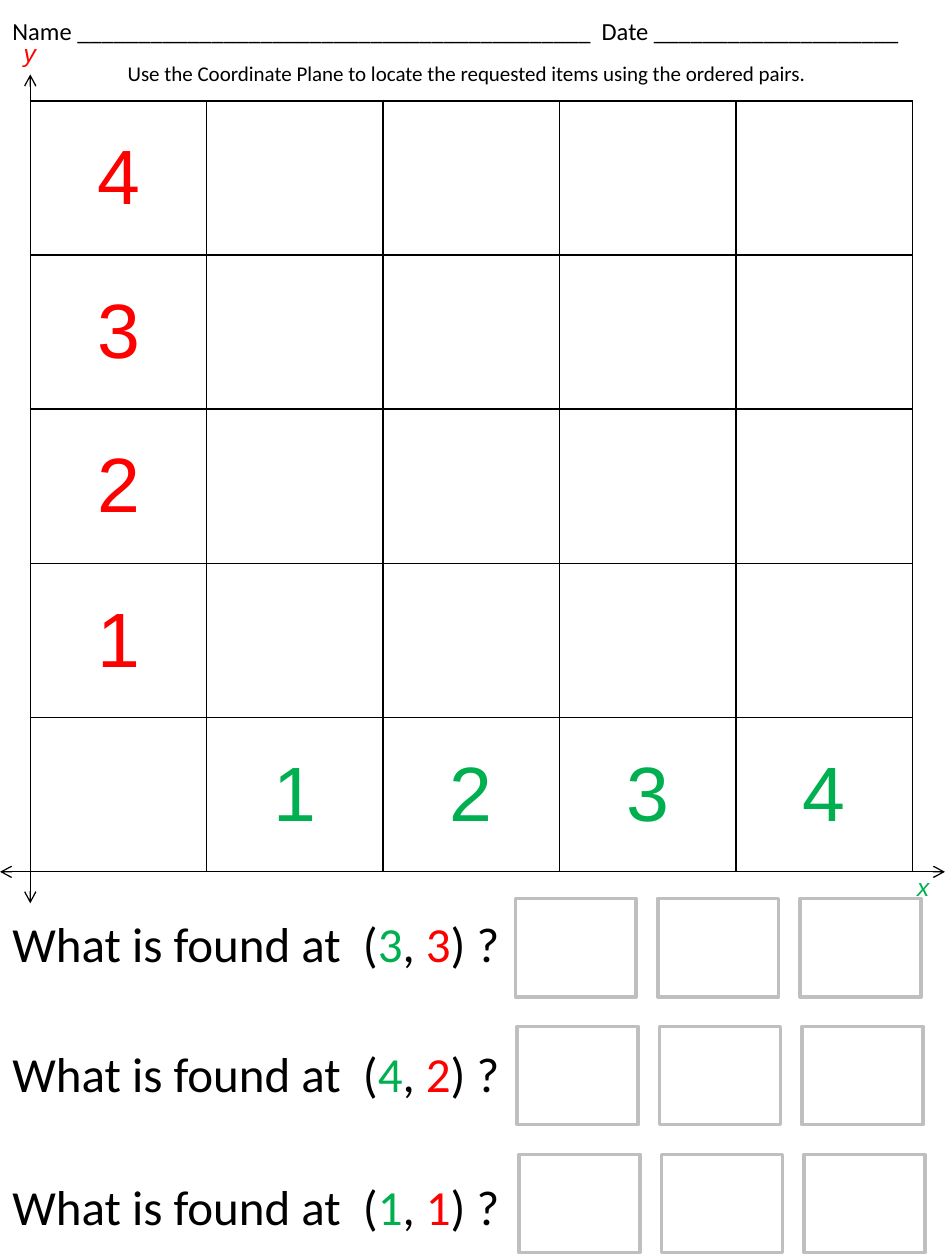
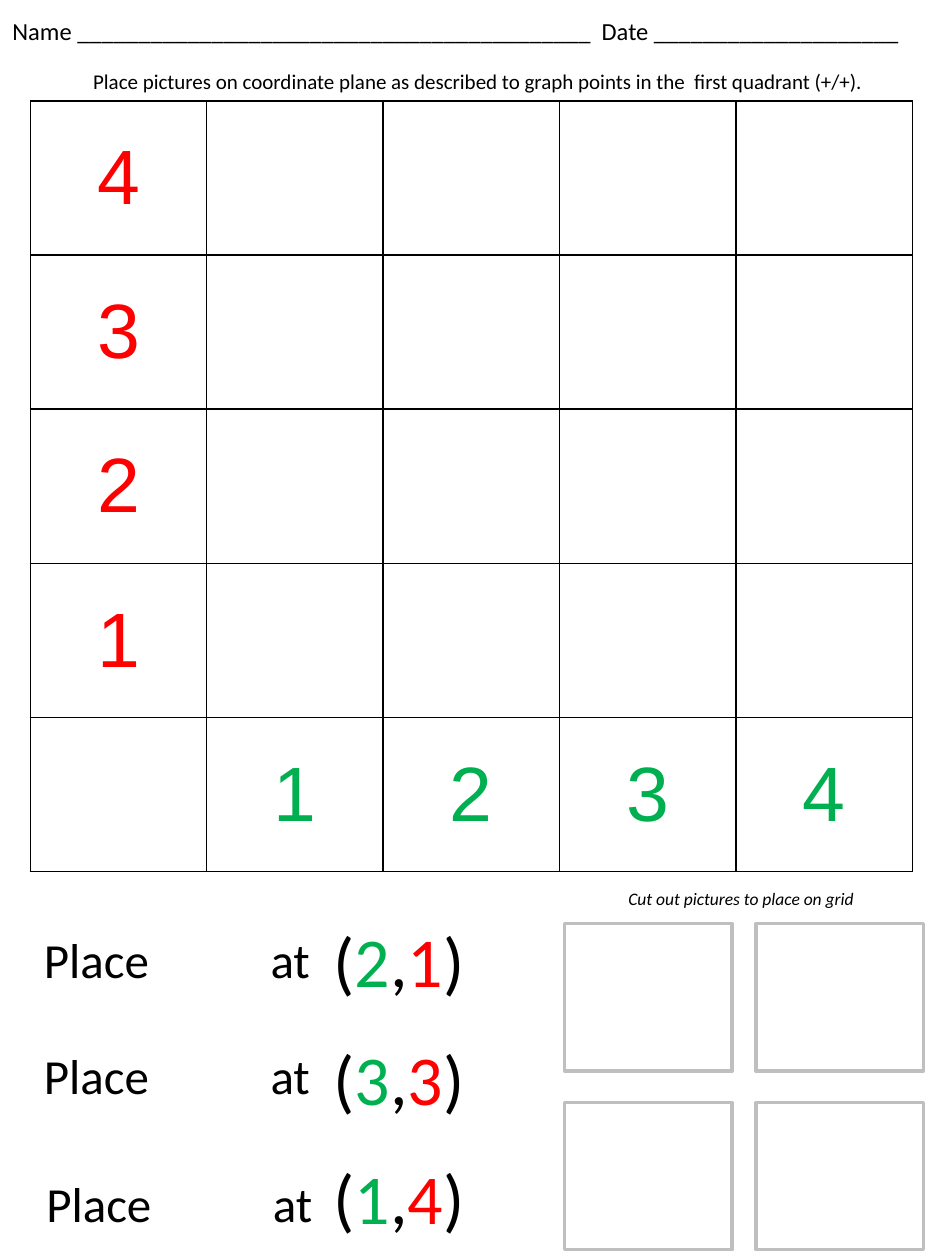
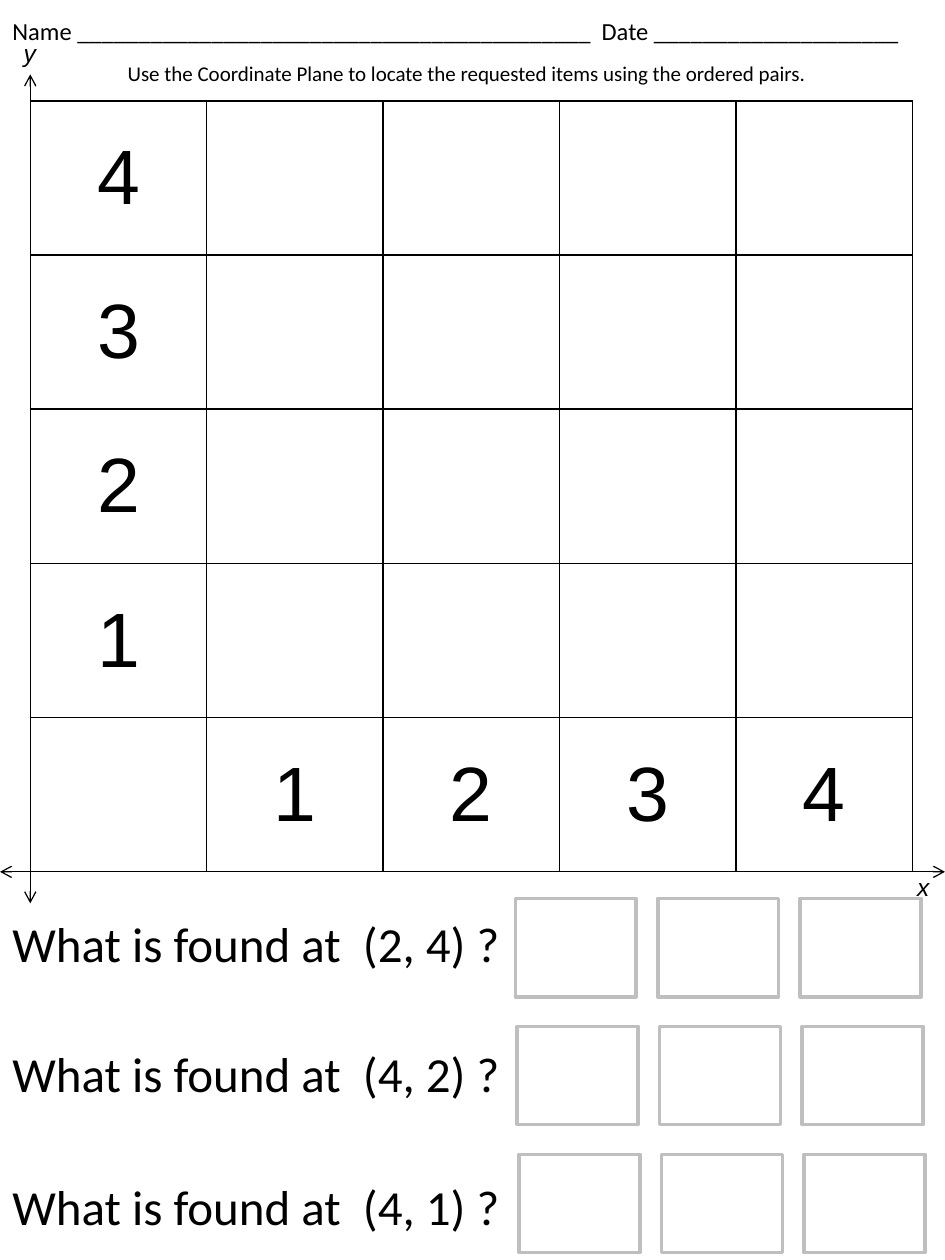
"""Build three coordinate plane worksheets: a grid with questions or placing tasks below it."""
from itertools import groupby, product

from pptx import Presentation
from pptx.dml.color import RGBColor as Rgb
from pptx.enum.shapes import MSO_CONNECTOR as Connector, MSO_SHAPE as Shape
from pptx.enum.text import MSO_ANCHOR as Anchor, MSO_AUTO_SIZE as AutoSize, PP_ALIGN as Align
from pptx.oxml import parse_xml
from pptx.oxml.ns import nsdecls, qn
from pptx.util import Pt

COLORS = {"ink": "000000", "x": "00B050", "y": "FF0000", "frame": "BFBFBF"}
COLORED = {"x": "x", "y": "y"}
PLAIN = {"x": "ink", "y": "ink"}
STYLES = {
    "name": {"name": "Calibri", "size": Pt(14)},
    "title": {"name": "Calibri", "size": Pt(12)},
    "axis": {"name": "Arial", "size": Pt(14), "italic": True},
    "number": {"name": "Arial", "size": Pt(44)},
    "question": {"name": "Calibri", "size": Pt(28)},
    "pair": {"name": "Calibri", "size": Pt(40)},
    "hint": {"name": "Calibri", "size": Pt(10), "italic": True},
}
NAME_LINE = "Name __________________________________________  Date ____________________"
NAME_BOX = (0, 5.8, 540, 24.5)
GRID_BOX = (17.3, 57.6, 504, 440.6)
LOCATE_TITLE = "Use the Coordinate Plane to locate the requested items using the ordered pairs."
LOCATE_BOX = (23.8, 15.8, 486, 51.8)
PLACE_TITLE = ("Place pictures on coordinate plane as described to graph points "
               "in the  first quadrant (+/+).")
PLACE_BOX = (30.2, 20.2, 486, 51.8)
GRID_SIZE = 5


def points(*lengths):
    """Turn numbers into lengths in points."""
    return [Pt(length) for length in lengths]


def write(paragraph, pieces, style, align=Align.LEFT):
    """Write (text, color) pieces, one run for each stretch of one color."""
    paragraph.alignment = align
    for color, group in groupby(pieces, key=lambda piece: piece[1]):
        run = paragraph.add_run()
        run.text = "".join(text for text, _ in group)
        for attribute, value in STYLES[style].items():
            setattr(run.font, attribute, value)
        run.font.color.rgb = Rgb.from_string(COLORS[color])


def add_text(slide, box, pieces, style, align=Align.LEFT, **frame_format):
    """Add a text box and return its paragraph."""
    frame = slide.shapes.add_textbox(*points(*box)).text_frame
    settings = {"word_wrap": True, "auto_size": AutoSize.SHAPE_TO_FIT_TEXT} | frame_format
    for attribute, value in settings.items():
        setattr(frame, attribute, value)
    write(frame.paragraphs[0], pieces, style, align)
    return frame.paragraphs[0]


def add_frame(slide, box):
    """Add an empty gray frame for a picture."""
    shape = slide.shapes.add_shape(Shape.RECTANGLE, *points(*box))
    shape.shadow.inherit = False
    shape.fill.background()
    shape.line.color.rgb = Rgb.from_string(COLORS["frame"])
    shape.line.width = Pt(2)


def add_header(slide, title, title_box):
    """Add the name line and the instruction."""
    add_text(slide, NAME_BOX, [(NAME_LINE, "ink")], "name")
    add_text(slide, title_box, [(title, "ink")], "title", Align.CENTER,
             auto_size=AutoSize.NONE, vertical_anchor=Anchor.MIDDLE)


def format_cell(cell):
    """Give a cell thin borders and no fill."""
    properties = cell._tc.get_or_add_tcPr()
    for side in "LRTB":
        properties.append(parse_xml(
            f'<a:ln{side} {nsdecls("a")} w="12700"><a:solidFill>'
            f'<a:srgbClr val="{COLORS["ink"]}"/></a:solidFill></a:ln{side}>'))
    cell.fill.background()
    cell.vertical_anchor = Anchor.MIDDLE


def add_grid(slide, box, scheme):
    """Add the grid with y numbers in the first column and x numbers in the last row."""
    table = slide.shapes.add_table(GRID_SIZE, GRID_SIZE, *points(*box)).table
    table.first_row = table.horz_banding = False
    for column, row in zip(table.columns, table.rows):
        column.width = Pt(box[2] / GRID_SIZE)
        row.height = Pt(box[3] / GRID_SIZE)
    for cell in table.iter_cells():
        format_cell(cell)
    last = GRID_SIZE - 1
    for number in range(1, GRID_SIZE):
        for row, column, axis in ((last - number, 0, "y"), (last, number, "x")):
            paragraph = table.cell(row, column).text_frame.paragraphs[0]
            write(paragraph, [(str(number), scheme[axis])], "number", Align.CENTER)


def add_axis(slide, *ends):
    """Add a line with an arrowhead at each end."""
    connector = slide.shapes.add_connector(Connector.STRAIGHT, *points(*ends))
    connector.line.color.rgb = Rgb.from_string(COLORS["ink"])
    connector.line.width = Pt(0.75)
    properties = connector._element.spPr
    for end in ("headEnd", "tailEnd"):
        properties.find(qn("a:ln")).append(parse_xml(f'<a:{end} {nsdecls("a")} type="arrow"/>'))
    properties.append(parse_xml(f'<a:effectLst {nsdecls("a")}/>'))


def add_axes(slide, box, scheme):
    """Add both axes and their letters around the grid box."""
    left, top, width, height = box
    bottom = top + height
    add_axis(slide, 540, bottom, 0, bottom)
    add_axis(slide, left, top - 15.1, left, bottom + 18)
    add_text(slide, (left + width - 4.3, bottom - 3.6, 21.6, 24.5), [("x", scheme["x"])], "axis")
    add_text(slide, (left - 10.8, top - 39.6, 21.6, 24.5), [("y", scheme["y"])], "axis")


def add_questions(slide, box, pairs, scheme):
    """Add one question with three answer frames for each pair."""
    left, top = box
    for row, ((x, y), drop) in enumerate(zip(pairs, (0, 74.2, 150.5))):
        pieces = [("What is found at  (", "ink"), (x, scheme["x"]), (", ", "ink"),
                  (y, scheme["y"]), (") ?", "ink")]
        add_text(slide, (left, top + drop, 300, 41), pieces, "question")
        for column in range(3):
            add_frame(slide, (left + 294.5 + 81.4 * column + 1.1 * row,
                              top - 5 + 73.1 * row, 69.1, 56.2))


def add_tasks(slide, box, pairs, scheme):
    """Add one placing task for each pair."""
    left, top = box
    for row, ((x, y), drop) in enumerate(zip(pairs, (0, 66.2, 139))):
        paragraph = add_text(slide, (left + row // 2 * 1.4, top + drop, 250.6, 41),
                             [("Place\tat", "ink")], "question")
        paragraph._p.get_or_add_pPr().append(parse_xml(
            f'<a:tabLst {nsdecls("a")}><a:tab pos="{Pt(129.5)}" algn="l"/></a:tabLst>'))
        pieces = [("(", "ink"), (x, scheme["x"]), (",", "ink"), (y, scheme["y"]), (") ", "ink")]
        add_text(slide, (left + 164.9, top - 7.2 + 67.7 * row, 99.4, 55.4), pieces, "pair",
                 Align.CENTER, word_wrap=False)


def add_cutouts(slide, box):
    """Add the hint and the four frames to cut out."""
    left, top = box
    add_text(slide, (left - 40.3, top - 23.8, 282.2, 19.4),
             [("Cut out pictures to place on grid", "ink")], "hint", Align.CENTER)
    for column, row in product(range(2), repeat=2):
        add_frame(slide, (left + 109.4 * column, top + 102.2 * row, 95.8, 84.2))


def build_locate_slide(slide, pairs, scheme):
    """Build a sheet that asks what is found at each pair."""
    add_header(slide, LOCATE_TITLE, LOCATE_BOX)
    add_grid(slide, GRID_BOX, scheme)
    add_axes(slide, GRID_BOX, scheme)
    add_questions(slide, (0, 518.4), pairs, scheme)


def build_place_slide(slide, pairs, scheme):
    """Build a sheet that asks to place a picture at each pair."""
    add_header(slide, PLACE_TITLE, PLACE_BOX)
    add_grid(slide, GRID_BOX, scheme)
    add_tasks(slide, (18, 527.8), pairs, scheme)
    add_cutouts(slide, (322.6, 527.8))


def main():
    """Build and save the presentation."""
    presentation = Presentation()
    presentation.slide_width, presentation.slide_height = points(540, 720)
    blank = presentation.slide_layouts[6]
    for build, pairs, scheme in (
        (build_locate_slide, ("33", "42", "11"), COLORED),
        (build_place_slide, ("21", "33", "14"), COLORED),
        (build_locate_slide, ("24", "42", "41"), PLAIN),
    ):
        build(presentation.slides.add_slide(blank), pairs, scheme)
    presentation.save("out.pptx")


if __name__ == "__main__":
    main()
